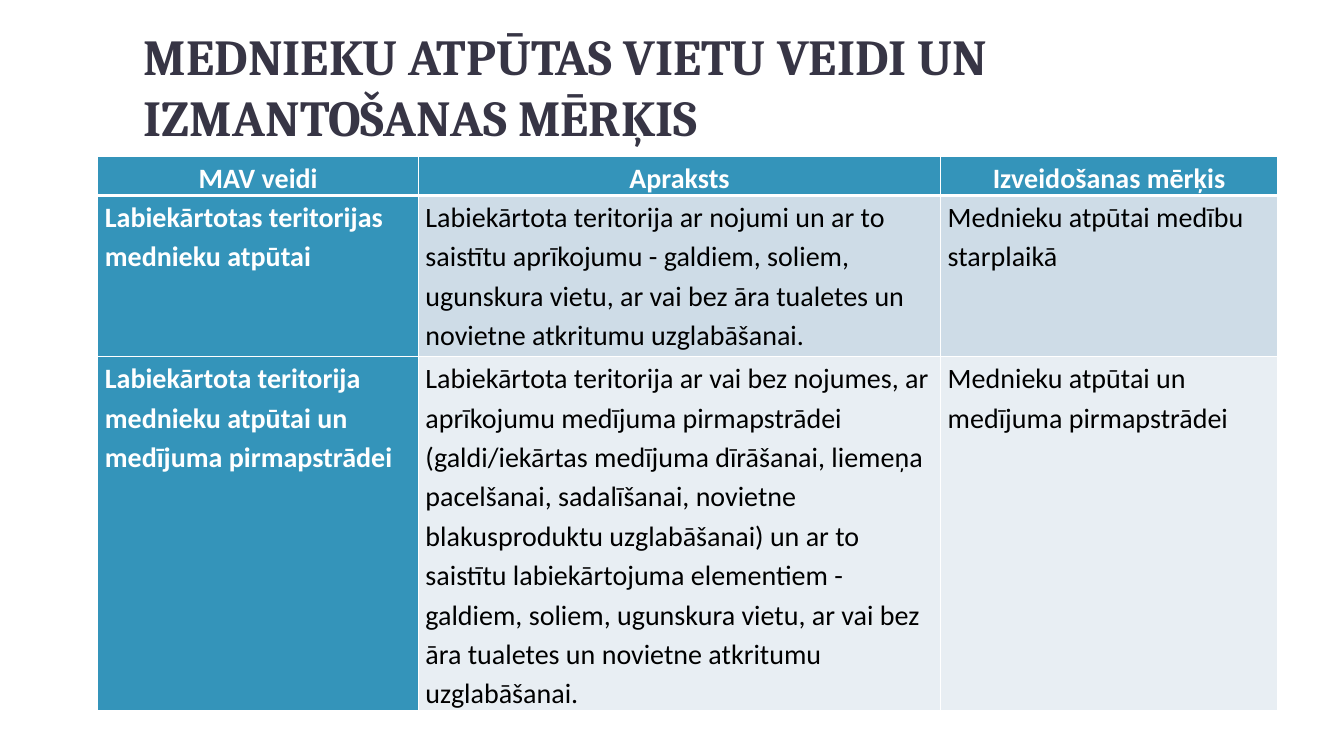
import pptx
import pptx.dml.color
import pptx.enum.text
import pptx.oxml
import pptx.oxml.ns
import pptx.util
from pptx.dml.color import RGBColor
from pptx.util import Inches, Pt

# Content
TITLE = "MEDNIEKU ATPŪTAS VIETU VEIDI UN IZMANTOŠANAS MĒRĶIS"
ROWS = [
    ("MAV veidi", "Apraksts", "Izveidošanas mērķis"),
    (
        "Labiekārtotas teritorijas mednieku atpūtai",
        "Labiekārtota teritorija ar nojumi un ar to saistītu aprīkojumu - galdiem, "
        "soliem, ugunskura vietu, ar vai bez āra tualetes un novietne atkritumu "
        "uzglabāšanai.",
        "Mednieku atpūtai medību starplaikā",
    ),
    (
        "Labiekārtota teritorija mednieku atpūtai un medījuma pirmapstrādei",
        "Labiekārtota teritorija ar vai bez nojumes, ar aprīkojumu medījuma "
        "pirmapstrādei (galdi/iekārtas medījuma dīrāšanai, liemeņa pacelšanai, "
        "sadalīšanai, novietne blakusproduktu uzglabāšanai) un ar to saistītu "
        "labiekārtojuma elementiem - galdiem, soliem, ugunskura vietu, ar vai bez "
        "āra tualetes un novietne atkritumu uzglabāšanai.",
        "Mednieku atpūtai un medījuma pirmapstrādei",
    ),
]
COLUMN_WIDTHS = (3.18, 5.18, 3.34)
ROW_HEIGHTS = (0.39, 1.6, 3.51)

# Colours
WHITE = RGBColor(0xFF, 0xFF, 0xFF)
BLACK = RGBColor(0x00, 0x00, 0x00)
TITLE_COLOUR = RGBColor(0x37, 0x35, 0x45)
HEADING_FILL = RGBColor(0x34, 0x94, 0xBA)
BAND_FILLS = (RGBColor(0xCE, 0xDC, 0xE7), RGBColor(0xE8, 0xEE, 0xF3))


def add_run(paragraph, text, font_name, size, colour, bold):
    run = paragraph.add_run()
    run.text = text
    run.font.name = font_name
    run.font.size = Pt(size)
    run.font.color.rgb = colour
    run.font.bold = bold


def set_borders(cell, top_width, bottom_width):
    """Draw white borders; they must come before the fill in the cell."""
    properties = cell._tc.get_or_add_tcPr()
    widths = {"lnL": 1, "lnR": 1, "lnT": top_width, "lnB": bottom_width}
    for index, (side, width) in enumerate(widths.items()):
        border = pptx.oxml.parse_xml(
            f'<a:{side} {pptx.oxml.ns.nsdecls("a")} w="{Pt(width)}">'
            f'<a:solidFill><a:srgbClr val="{WHITE}"/></a:solidFill></a:{side}>'
        )
        properties.insert(index, border)


def add_title(slide):
    title = slide.shapes.add_textbox(Inches(1.33), Inches(0.3), Inches(11.33), Inches(1.25))
    frame = title.text_frame
    frame.word_wrap = True
    frame.vertical_anchor = pptx.enum.text.MSO_ANCHOR.BOTTOM
    frame.margin_bottom = Inches(0.1)
    add_run(frame.paragraphs[0], TITLE, "Cambria", 36, TITLE_COLOUR, True)


def fill_cell(cell, text, row, column):
    is_header = row == 0
    is_heading = is_header or column == 0
    cell.margin_left = cell.margin_right = Inches(0.07)
    cell.margin_top = cell.margin_bottom = 0
    cell.fill.solid()
    cell.fill.fore_color.rgb = HEADING_FILL if is_heading else BAND_FILLS[(row - 1) % 2]
    set_borders(cell, 3 if row == 1 else 1, 3 if is_header else 1)
    paragraph = cell.text_frame.paragraphs[0]
    paragraph.line_spacing = 1.15
    if is_header:
        paragraph.alignment = pptx.enum.text.PP_ALIGN.CENTER
    add_run(paragraph, text, "Calibri", 20, WHITE if is_heading else BLACK, is_heading)


def add_types_table(slide):
    table = slide.shapes.add_table(
        len(ROWS), len(COLUMN_WIDTHS), Inches(0.97), Inches(1.55),
        Inches(sum(COLUMN_WIDTHS)), Inches(sum(ROW_HEIGHTS)),
    ).table
    table.first_col = True
    for column, width in zip(table.columns, COLUMN_WIDTHS):
        column.width = Inches(width)
    for row, height in zip(table.rows, ROW_HEIGHTS):
        row.height = Inches(height)
    for row, texts in enumerate(ROWS):
        for column, text in enumerate(texts):
            fill_cell(table.cell(row, column), text, row, column)


def main():
    presentation = pptx.Presentation()
    presentation.slide_width = Inches(13.33)
    presentation.slide_height = Inches(7.5)
    slide = presentation.slides.add_slide(presentation.slide_layouts[6])
    add_title(slide)
    add_types_table(slide)
    presentation.save("out.pptx")


if __name__ == "__main__":
    main()
